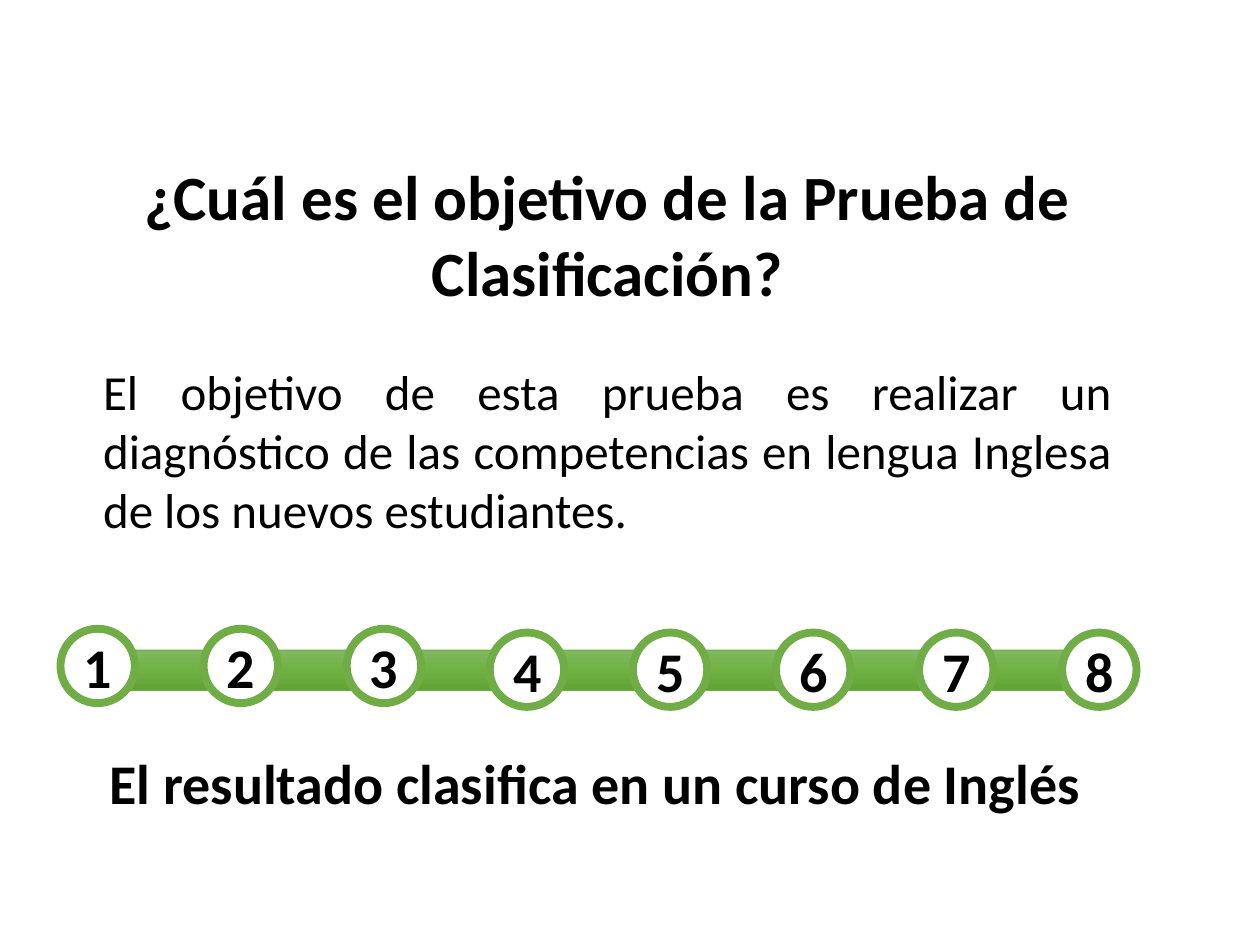
from copy import deepcopy

from pptx import Presentation
from pptx.dml.color import RGBColor
from pptx.enum.shapes import MSO_SHAPE as Shape
from pptx.enum.text import MSO_ANCHOR as Anchor, MSO_AUTO_SIZE as AutoSize, PP_ALIGN as Align
from pptx.util import Inches, Pt

BLACK = RGBColor(0x00, 0x00, 0x00)
WHITE = RGBColor(0xFF, 0xFF, 0xFF)
GREEN = RGBColor(0x70, 0xAD, 0x47)
BAR_STOPS = [
    (0, RGBColor(0x81, 0xB8, 0x61)),
    (0.5, RGBColor(0x6F, 0xB2, 0x42)),
    (1, RGBColor(0x62, 0xA3, 0x36)),
]


def write(shape, text, size, bold=True, align=Align.CENTER):
    para = shape.text_frame.paragraphs[0]
    para.alignment = align
    span = para.add_run()
    span.text = text
    span.font.name = "Calibri"
    span.font.size = Pt(size)
    span.font.bold = bold
    span.font.color.rgb = BLACK
    return para


def add_box(left, top, width, height, wrap=True):
    box = page.shapes.add_textbox(Inches(left), Inches(top), Inches(width), Inches(height))
    box.text_frame.word_wrap = wrap
    box.text_frame.auto_size = AutoSize.SHAPE_TO_FIT_TEXT
    return box


deck = Presentation()
deck.slide_width = Inches(10)
deck.slide_height = Inches(7.5)
page = deck.slides.add_slide(deck.slide_layouts[6])

# Heading and explanation
write(add_box(0.72, 1.2, 8.2, 1.31), "¿Cuál es el objetivo de la Prueba de Clasificación?", 36)
write(
    add_box(0.72, 2.82, 8.2, 1.51),
    "El objetivo de esta prueba es realizar un diagnóstico de las competencias "
    "en lengua Inglesa de los nuevos estudiantes.",
    28, bold=False, align=Align.JUSTIFY,
)

# Green bar behind the course levels
bar = page.shapes.add_shape(
    Shape.ROUNDED_RECTANGLE, Inches(0.65), Inches(5.16), Inches(8.19), Inches(0.32))
bar.shadow.inherit = False
bar.line.color.rgb = GREEN
bar.line.width = Pt(0.5)
bar.fill.gradient()
bar.fill.gradient_angle = 270
stop_list = bar._element.spPr.find(".//{*}gsLst")
stop_list.insert(1, deepcopy(stop_list[0]))
for stop, (position, color) in zip(bar.fill.gradient_stops, BAR_STOPS):
    stop.position = position
    stop.color.rgb = color

# Numbered circles: the first three sit slightly higher
for level in range(1, 9):
    left = 0.48 + (level - 1) * 7.95 / 7
    top = 4.99 if level <= 3 else 5.02
    circle = page.shapes.add_shape(
        Shape.OVAL, Inches(left), Inches(top), Inches(0.59), Inches(0.59))
    circle.shadow.inherit = False
    circle.fill.solid()
    circle.fill.fore_color.rgb = WHITE
    circle.line.color.rgb = GREEN
    circle.line.width = Pt(4.5)
    circle.text_frame.vertical_anchor = Anchor.MIDDLE
    write(circle, str(level), 32)

# Closing statement, indented one level
closing = write(
    add_box(0.13, 5.89, 8.69, 0.64, wrap=False),
    "El resultado clasifica en un curso de Inglés", 32)
closing.level = 1
closing._p.get_or_add_pPr().set("marL", str(Inches(0.5)))
closing._p.get_or_add_pPr().set("indent", "0")

deck.save("out.pptx")
